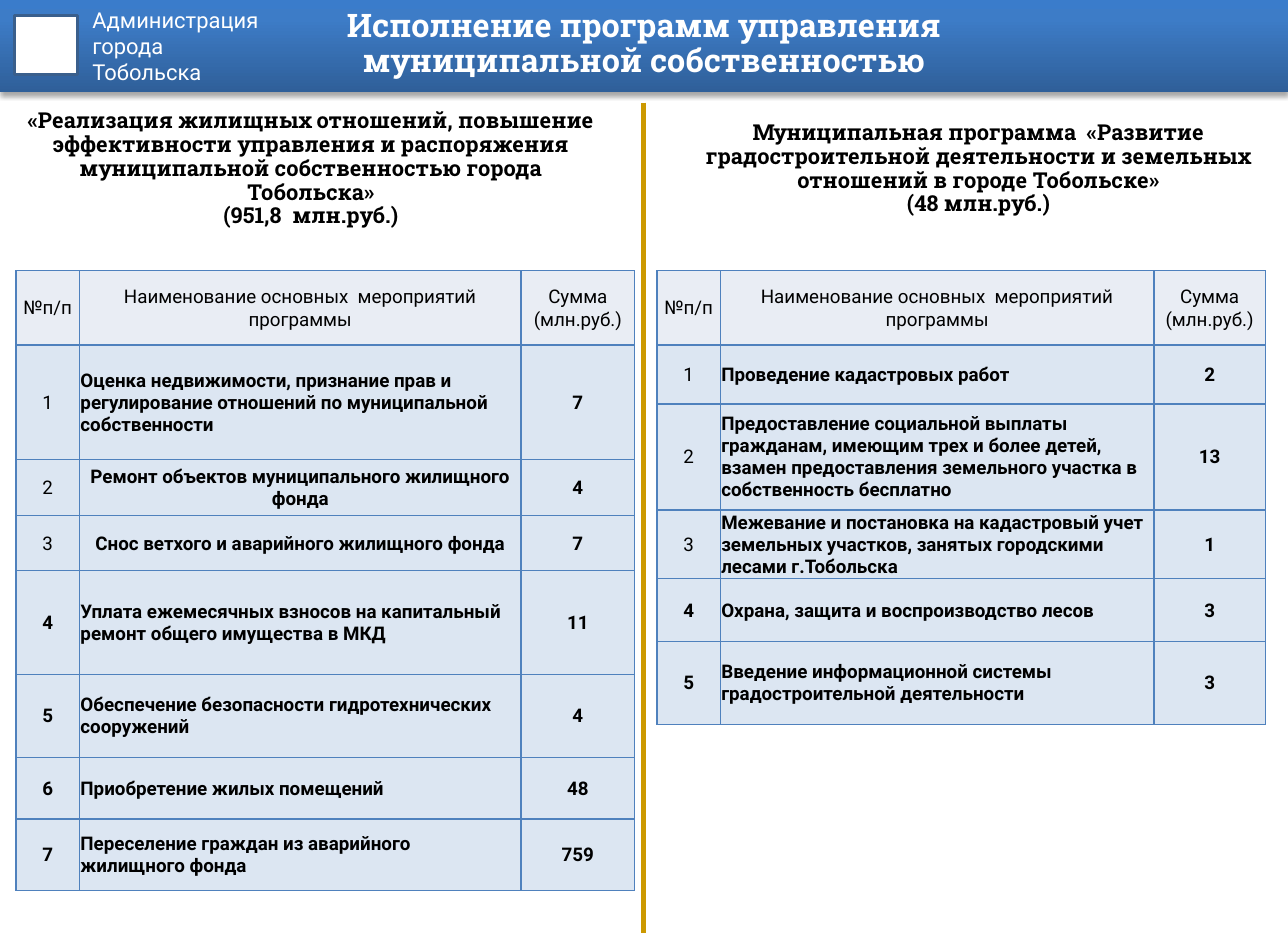
import copy
import dataclasses

import lxml.etree
import pptx
import pptx.dml.color
import pptx.enum.shapes
import pptx.enum.text
import pptx.oxml
import pptx.oxml.ns
import pptx.util

Pt = pptx.util.Pt
RGB = pptx.dml.color.RGBColor.from_string
ALIGN = pptx.enum.text.PP_ALIGN
MIDDLE = pptx.enum.text.MSO_ANCHOR.MIDDLE
RECT = pptx.enum.shapes.MSO_SHAPE.RECTANGLE
NS = pptx.oxml.ns.nsdecls("a")


@dataclasses.dataclass
class Theme:
    white: str = "FFFFFF"
    black: str = "000000"
    bar: tuple = ((0, "2F5F99"), (0.8, "3D7CC7"), (1, "3A7CCB"))
    frame: str = "3A5F8C"
    gold: str = "CC9900"
    grid: str = "4F81BD"
    head: str = "E9EDF4"
    body: str = "DCE6F2"
    sans: str = "Roboto"
    slab: str = "Roboto Slab"
    big: float = 20.7
    mid: float = 14
    small: float = 12


theme = Theme()


def write(frame, text, face, size, color, bold, align, pitch=1.0):
    frame.text = text
    frame.word_wrap = True
    for para in frame.paragraphs:
        para.alignment = align
        para.line_spacing = pitch
        for run in para.runs:
            run.font.name = face
            run.font.size = Pt(size)
            run.font.bold = bold
            run.font.color.rgb = RGB(color)


def edge(cell, color):
    props = cell._tc.get_or_add_tcPr()
    for spot, side in enumerate(("lnL", "lnR", "lnT", "lnB")):
        props.insert(spot, pptx.oxml.parse_xml(
            f'<a:{side} {NS} w="{Pt(1)}"><a:solidFill>'
            f'<a:srgbClr val="{color}"/></a:solidFill></a:{side}>'))


deck = pptx.Presentation()
deck.slide_width, deck.slide_height = Pt(822.24), Pt(595.44)
slide = deck.slides.add_slide(deck.slide_layouts[5])
shapes = slide.shapes

# Header bar with gradient and soft shadow
bar = shapes.add_shape(RECT, 0, 0, deck.slide_width, Pt(59))
bar.line.fill.background()
bar.fill.gradient()
bar.fill.gradient_angle = 90
stops = bar.fill.gradient_stops
first = stops[0]._gs
first.addnext(copy.deepcopy(first))
for stop, (place, color) in zip(bar.fill.gradient_stops, theme.bar):
    stop.position = place
    stop.color.rgb = RGB(color)
bar.shadow.inherit = False
glow = bar._element.spPr.find(pptx.oxml.ns.qn("a:effectLst"))
glow.append(pptx.oxml.parse_xml(
    f'<a:outerShdw {NS} blurRad="{Pt(3.1)}" dist="{Pt(1.8)}" dir="5400000" rotWithShape="0">'
    f'<a:srgbClr val="{theme.black}"><a:alpha val="35000"/></a:srgbClr></a:outerShdw>'))

# Emblem field and owner
badge = shapes.add_shape(RECT, Pt(9.4), Pt(10), Pt(40.3), Pt(37.5))
badge.shadow.inherit = False
badge.fill.solid()
badge.fill.fore_color.rgb = RGB(theme.white)
badge.line.color.rgb = RGB(theme.frame)
badge.line.width = Pt(2)
owner = shapes.add_textbox(Pt(51), 0, Pt(193), Pt(76))
write(owner.text_frame, "Администрация\nгорода\nТобольска", theme.sans,
      theme.mid, theme.white, False, ALIGN.LEFT)
owner.text_frame.margin_left = Pt(8)
owner.text_frame.margin_top = Pt(4)

# Title, brought in front of the bar
title = shapes.title
shapes._spTree.append(title._element)
title.left, title.top, title.width, title.height = Pt(167), 0, Pt(488), Pt(56.5)
write(title.text_frame, "Исполнение программ управления муниципальной собственностью",
      theme.slab, theme.big, theme.white, True, ALIGN.CENTER, 0.9)
title.text_frame.vertical_anchor = MIDDLE

# Programme headings
heads = (
    (1.5, "«Реализация жилищных отношений, повышение эффективности управления и "
          "распоряжения муниципальной собственностью города Тобольска»\n"
          "(951,8  млн.руб.)"),
    (427.7, "Муниципальная программа  «Развитие градостроительной деятельности и "
            "земельных отношений в городе Тобольске»\n(48 млн.руб.)"),
)
for left, text in heads:
    box = shapes.add_textbox(Pt(left), Pt(76.5), Pt(394), Pt(63))
    write(box.text_frame, text, theme.slab, theme.mid, theme.black, True,
          ALIGN.CENTER, 0.9)
    box.text_frame.vertical_anchor = MIDDLE
    box.text_frame.margin_left = box.text_frame.margin_right = Pt(8)

# Tables: left edge, column widths, head height, rows of (height, name, sum, align)
top = ("№п/п", "Наименование основных  мероприятий программы", "Сумма\n(млн.руб.)")
tables = (
    (10.2, (40.5, 282, 72.5), (
        (72.8, "Оценка недвижимости, признание прав и регулирование отношений "
               "по муниципальной собственности", "7", ALIGN.LEFT),
        (36, "Ремонт объектов муниципального жилищного фонда", "4", ALIGN.CENTER),
        (35, "Снос ветхого и аварийного жилищного фонда", "7", ALIGN.CENTER),
        (66.3, "Уплата ежемесячных взносов на капитальный ремонт общего "
               "имущества в МКД", "11", ALIGN.LEFT),
        (53, "Обеспечение безопасности гидротехнических сооружений", "4", ALIGN.LEFT),
        (39.5, "Приобретение жилых помещений", "48", ALIGN.LEFT),
        (45.4, "Переселение граждан из аварийного жилищного фонда", "759", ALIGN.LEFT),
    )),
    (419.5, (40.3, 277, 71), (
        (37.5, "Проведение кадастровых работ", "2", ALIGN.LEFT),
        (67.7, "Предоставление социальной выплаты гражданам, имеющим трех и более "
               "детей, взамен предоставления земельного участка в собственность "
               "бесплатно", "13", ALIGN.LEFT),
        (43, "Межевание и постановка на кадастровый учет земельных участков, "
             "занятых городскими лесами г.Тобольска", "1", ALIGN.LEFT),
        (40, "Охрана, защита и воспроизводство лесов", "3", ALIGN.LEFT),
        (53, "Введение информационной системы градостроительной деятельности",
         "3", ALIGN.LEFT),
    )),
)
for left, widths, rows in tables:
    tall = [47.5] + [row[0] for row in rows]
    grid = shapes.add_table(len(tall), 3, Pt(left), Pt(172.8),
                            Pt(sum(widths)), Pt(sum(tall))).table
    grid.first_row = grid.horz_banding = False
    for col, width in zip(grid.columns, widths):
        col.width = Pt(width)
    for r, high in enumerate(tall):
        grid.rows[r].height = Pt(high)
        texts = (str(r), rows[r - 1][1], rows[r - 1][2]) if r else top
        for c, text in enumerate(texts):
            cell = grid.cell(r, c)
            bold = r > 0 and (c > 0 or r > 3)
            align = rows[r - 1][3] if r and c == 1 else ALIGN.CENTER
            write(cell.text_frame, text, theme.sans, theme.small, theme.black,
                  bold, align)
            cell.vertical_anchor = MIDDLE
            cell.margin_left = cell.margin_right = cell.margin_top = Pt(0.7)
            cell.margin_bottom = 0
            cell.fill.solid()
            cell.fill.fore_color.rgb = RGB(theme.body if r else theme.head)
            edge(cell, theme.grid)

# Divider between the programmes
rule = shapes.add_connector(pptx.enum.shapes.MSO_CONNECTOR.STRAIGHT,
                            Pt(411), Pt(65.5), Pt(411), deck.slide_height)
rule.line.color.rgb = RGB(theme.gold)
rule.line.width = Pt(3)
lxml.etree.SubElement(rule._element.spPr, pptx.oxml.ns.qn("a:effectLst"))

deck.save("out.pptx")
